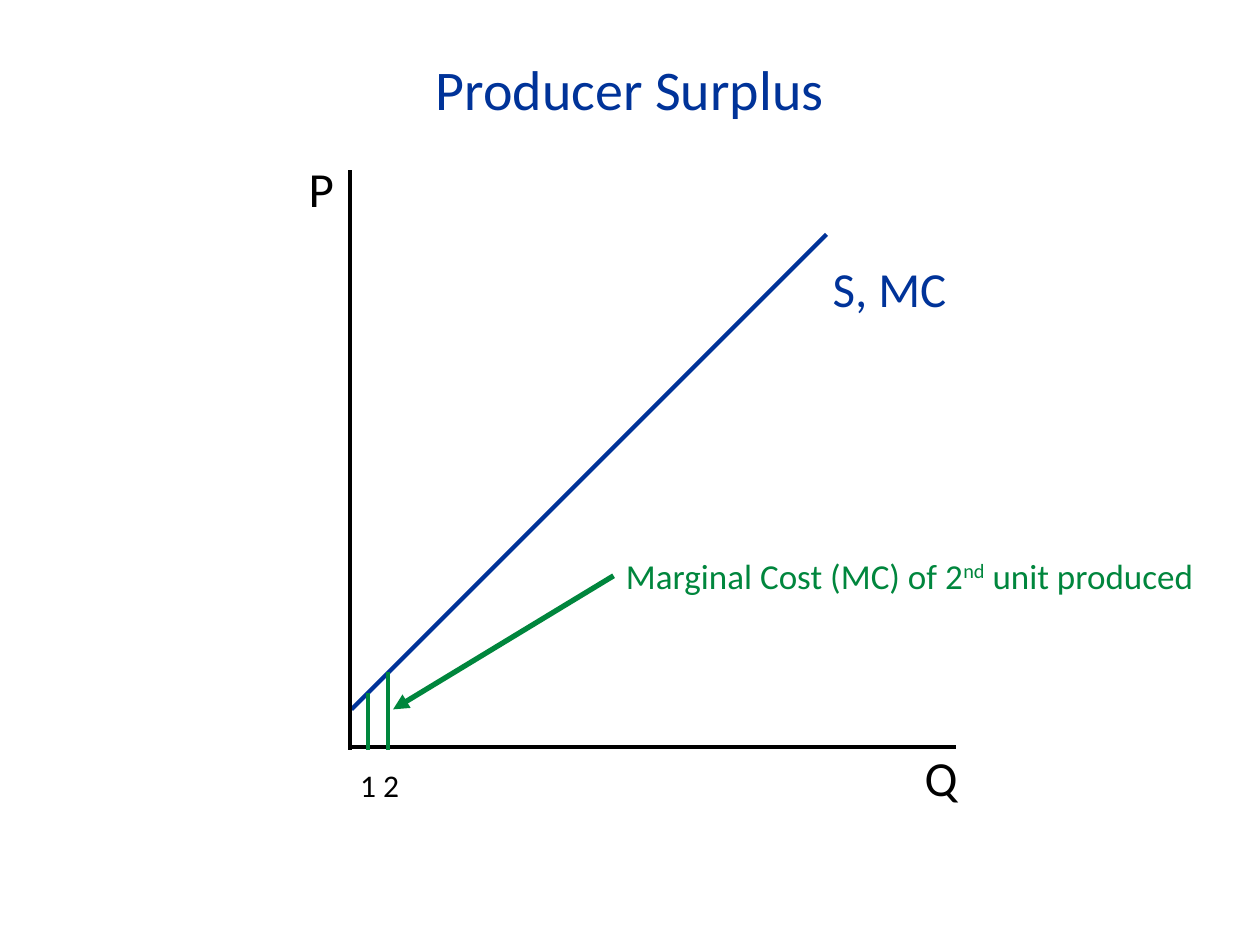
"""Build the Producer Surplus slide with its supply and marginal cost diagram."""
from lxml import etree
from pptx import Presentation
from pptx import util as u
from pptx.dml.color import RGBColor
from pptx.enum import shapes, text
from pptx.oxml import ns

BLUE, GREEN, BLACK = "003399", "00863D", "000000"


def style(paragraph, size, colour):
    for span in paragraph.runs:
        span.font.size = u.Pt(size)
        span.font.name = "Calibri"
        span.font.color.rgb = RGBColor.from_string(colour)


deck = Presentation()
deck.slide_width, deck.slide_height = u.Inches(10), u.Inches(7.5)
page = deck.slides.add_slide(deck.slide_layouts[5])

title = page.shapes.title
title.left, title.top = u.Inches(0.7), u.Inches(0.38)
title.width, title.height = u.Inches(8.6), u.Inches(0.64)
title.text_frame.text = "Producer Surplus"
title.text_frame.vertical_anchor = text.MSO_ANCHOR.MIDDLE
title.text_frame.paragraphs[0].alignment = text.PP_ALIGN.CENTER
style(title.text_frame.paragraphs[0], 32, BLUE)

supply_curve = (2.79, 5.63, 6.56, 1.86, BLUE, 2.5)
price_axis = (2.78, 1.35, 2.78, 5.95, BLACK, 2.5)
quantity_axis = (2.79, 5.93, 7.59, 5.93, BLACK, 2.5)
first_unit = (2.92, 5.5, 2.92, 5.95, GREEN, 2.5)
second_unit = (3.08, 5.33, 3.08, 5.95, GREEN, 2.5)
cost_arrow = (4.87, 4.57, 3.12, 5.63, GREEN, 3)
for part in (supply_curve, price_axis, quantity_axis, first_unit, second_unit, cost_arrow):
    x1, y1, x2, y2, colour, weight = part
    line = page.shapes.add_connector(
        shapes.MSO_CONNECTOR.STRAIGHT,
        u.Inches(x1), u.Inches(y1), u.Inches(x2), u.Inches(y2))
    line.line.color.rgb = RGBColor.from_string(colour)
    line.line.width = u.Pt(weight)
    properties = line._element.spPr
    etree.SubElement(properties, ns.qn("a:effectLst"))
    if part is cost_arrow:
        etree.SubElement(properties.find(ns.qn("a:ln")), ns.qn("a:tailEnd"), type="triangle")

labels = [
    (["Q"], 7.24, 5.88, 0.51, 0.57, 28, BLACK, True, 1),
    (["P"], 2.35, 1.3, 0.45, 0.49, 28, BLACK, True, 0.8),
    (["S, MC"], 6.51, 2, 1.23, 0.57, 28, BLUE, True, 1),
    (["Marginal Cost (MC) of 2", "nd", " unit produced"],
     4.87, 4.35, 4.77, 0.44, 20, GREEN, False, 1),
    (["1 2"], 2.76, 6.03, 0.81, 0.41, 18, BLACK, True, 1),
]
for words, left, top, width, height, size, colour, wrap, spacing in labels:
    box = page.shapes.add_textbox(
        u.Inches(left), u.Inches(top), u.Inches(width), u.Inches(height))
    box.text_frame.word_wrap = wrap
    box.text_frame.auto_size = text.MSO_AUTO_SIZE.SHAPE_TO_FIT_TEXT
    para = box.text_frame.paragraphs[0]
    para.line_spacing = spacing
    for word in words:
        span = para.add_run()
        span.text = word
        if word == "nd":
            span._r.get_or_add_rPr().set("baseline", "30000")
    style(para, size, colour)

deck.save("out.pptx")
